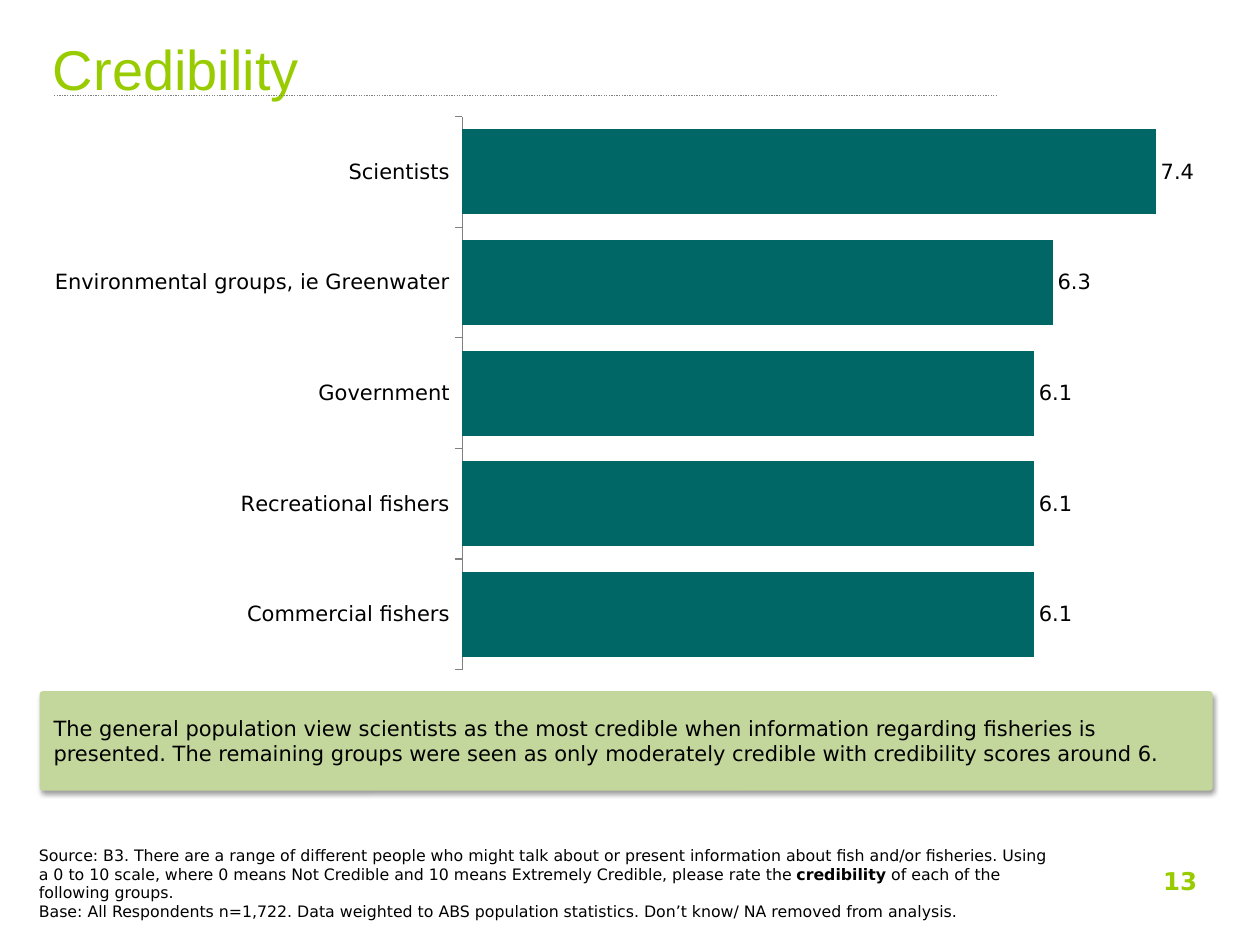
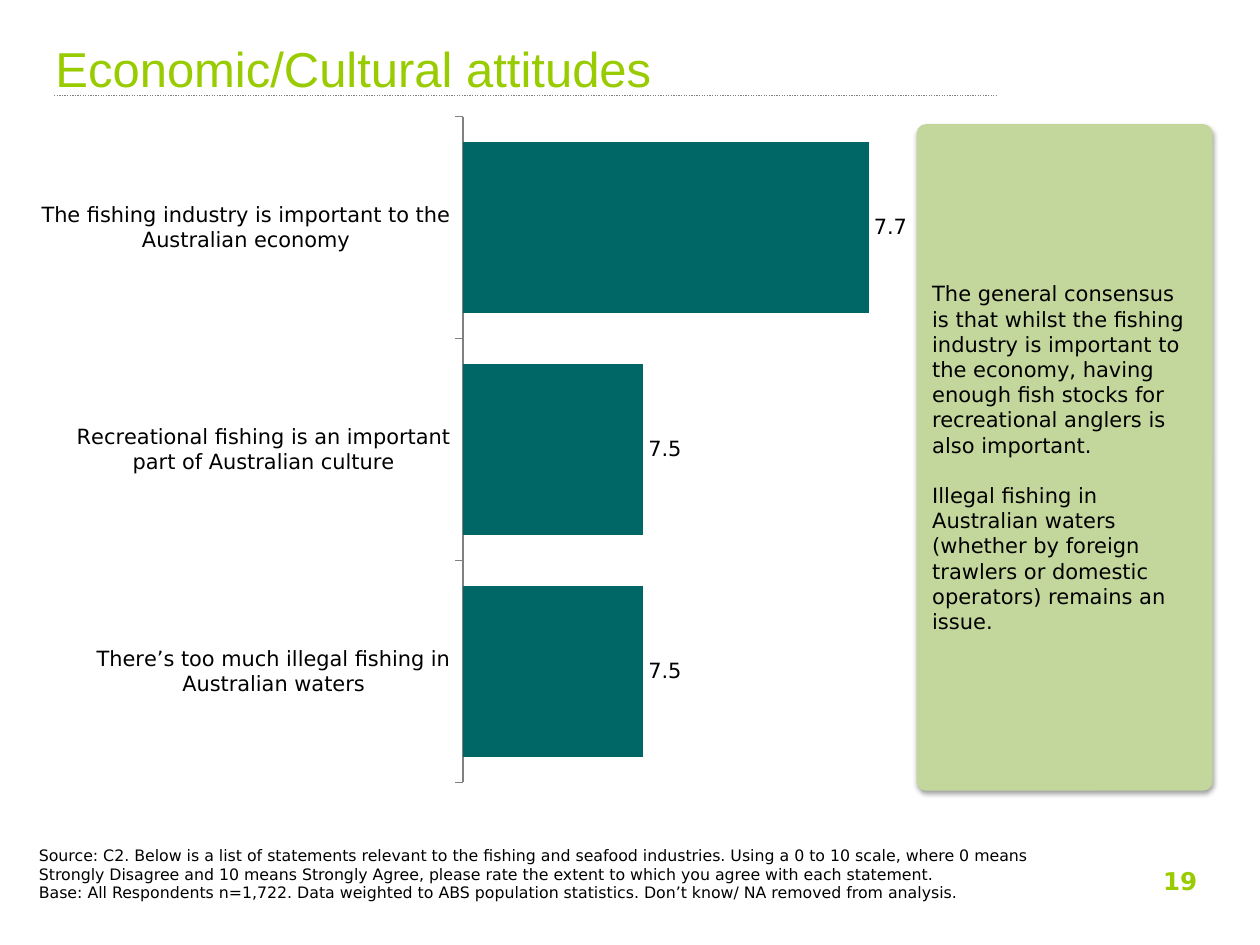
from lxml import etree
from pptx import Presentation
from pptx.chart.data import CategoryChartData
from pptx.dml.color import RGBColor
from pptx.enum.chart import XL_CHART_TYPE, XL_LABEL_POSITION, XL_TICK_MARK
from pptx.enum.dml import MSO_LINE
from pptx.enum.shapes import MSO_CONNECTOR, MSO_SHAPE
from pptx.enum.text import MSO_ANCHOR, PP_ALIGN
from pptx.oxml import parse_xml
from pptx.oxml.ns import nsdecls, qn
from pptx.util import Inches, Pt

COLORS = {"lime": "99CC00", "teal": "006666", "sage": "C3D69B",
          "gray": "808080", "black": "000000"}
BODY = "DejaVu Sans"
STYLES = {
    "title": {"name": "Arial", "color": "lime"},
    "number": {"name": BODY, "size": Pt(14), "bold": True, "color": "lime"},
    "source": {"name": BODY, "size": Pt(9), "color": "black"},
    "strong": {"name": BODY, "size": Pt(9), "bold": True, "color": "black"},
    "note": {"name": BODY, "size": Pt(12), "color": "black"},
}
BASE = ("Base: All Respondents n=1,722. Data weighted to ABS population "
        "statistics. Don’t know/ NA removed from analysis.")


def paint(name):
    return RGBColor.from_string(COLORS[name])


def style(font, key, **extra):
    for attr, value in {**STYLES[key], **extra}.items():
        if attr == "color":
            font.color.rgb = paint(value)
        else:
            setattr(font, attr, value)


def place(box):
    return [Inches(v) for v in box]


def write(frame, paras, key, gap=0, align=PP_ALIGN.LEFT):
    """Each paragraph is a list of (text, style) runs or a plain string."""
    frame.word_wrap = True
    for i, runs in enumerate(paras):
        para = frame.add_paragraph() if i else frame.paragraphs[0]
        para.alignment = align
        if i and gap:
            para.space_before = Pt(gap)
        for text, look in [(runs, key)] if isinstance(runs, str) else runs:
            run = para.add_run()
            run.text = text
            style(run.font, look)


# Title with the dotted rule below it
def add_title(slide, box, text, size):
    title = slide.shapes.title
    title.left, title.top, title.width, title.height = place(box)
    frame = title.text_frame
    frame.vertical_anchor = MSO_ANCHOR.MIDDLE
    frame.text = text
    para = frame.paragraphs[0]
    para.alignment = PP_ALIGN.LEFT
    style(para.runs[0].font, "title", size=Pt(size))
    rule = slide.shapes.add_connector(MSO_CONNECTOR.STRAIGHT,
                                      *place((0.43, 0.76, 7.91, 0.76)))
    rule.line.color.rgb = paint("gray")
    rule.line.width = Pt(0.75)
    rule.line.dash_style = MSO_LINE.ROUND_DOT
    etree.SubElement(rule.element.spPr, qn("a:effectLst"))


# Source note and page number
def add_footer(slide, source, number):
    note = slide.shapes.add_textbox(*place((0.21, 6.66, 8.28, 0.6)))
    write(note.text_frame, [source, BASE], "source")
    page = slide.shapes.add_textbox(*place((7.27, 6.82, 2.33, 0.52)))
    write(page.text_frame, [number], "number", align=PP_ALIGN.RIGHT)


# Green panel with the finding
def add_panel(slide, box, paras):
    panel = slide.shapes.add_shape(MSO_SHAPE.ROUNDED_RECTANGLE, *place(box))
    panel.adjustments[0] = 0.03
    panel.fill.solid()
    panel.fill.fore_color.rgb = paint("sage")
    panel.line.color.rgb = paint("sage")
    panel.line.width = Pt(0.75)
    panel.element.spPr.append(parse_xml(
        f'<a:effectLst {nsdecls("a")}><a:outerShdw blurRad="{Pt(3.1)}" '
        f'dist="{Pt(1.6)}" dir="5400000" rotWithShape="0">'
        f'<a:srgbClr val="{COLORS["black"]}"><a:alpha val="38000"/></a:srgbClr>'
        '</a:outerShdw></a:effectLst>'))
    panel.text_frame.vertical_anchor = MSO_ANCHOR.MIDDLE
    write(panel.text_frame, paras, "note", gap=14.4)


# Bar chart of mean scores
def add_bars(slide, box, scores, scale, left):
    data = CategoryChartData(number_format="0.0")
    data.categories = list(scores)
    data.add_series("Series 1", list(scores.values()))
    chart = slide.shapes.add_chart(XL_CHART_TYPE.BAR_CLUSTERED,
                                   *place(box), data).chart
    chart.has_title = chart.has_legend = False
    style(chart.font, "note", size=Pt(18))

    cats = chart.category_axis
    cats.reverse_order = True
    cats.has_major_gridlines = False
    cats.major_tick_mark = XL_TICK_MARK.OUTSIDE
    cats.format.line.color.rgb = paint("gray")
    style(cats.tick_labels.font, "note")
    axis = chart.value_axis
    axis.visible = axis.has_major_gridlines = False
    axis.minimum_scale, axis.maximum_scale = scale

    plot = chart.plots[0]
    plot.gap_width = 30
    plot.vary_by_categories = False
    fill = plot.series[0].format.fill
    fill.solid()
    fill.fore_color.rgb = paint("teal")
    plot.has_data_labels = True
    labels = plot.data_labels
    for attr, value in {"show_value": True, "number_format": "#,##0.0",
                        "number_format_is_linked": False,
                        "position": XL_LABEL_POSITION.OUTSIDE_END}.items():
        setattr(labels, attr, value)
    style(labels.font, "note")
    set_area(chart, {"x": left, "y": 0, "w": round(1 - left, 3), "h": 0.96})


def set_area(chart, sides):
    area = chart.element.find(".//" + qn("c:plotArea"))
    for old in area.findall(qn("c:layout")):
        area.remove(old)
    modes = "".join(f'<c:{s}Mode val="edge"/>' for s in "xy")
    sizes = "".join(f'<c:{s} val="{v}"/>' for s, v in sides.items())
    area.insert(0, parse_xml(
        f'<c:layout {nsdecls("c")}><c:manualLayout>'
        f'<c:layoutTarget val="inner"/>{modes}{sizes}'
        '</c:manualLayout></c:layout>'))


def add_trust(slide):
    add_title(slide, (0.32, 0.09, 7.34, 0.9), "Credibility", 32)
    add_bars(slide, (0.32, 0.92, 9.3, 4.58), {
        "Scientists": 7.4,
        "Environmental groups, ie Greenwater": 6.3,
        "Government": 6.1,
        "Recreational fishers": 6.1,
        "Commercial fishers": 6.1,
    }, (0, 8), 0.36)
    add_panel(slide, (0.32, 5.49, 9.3, 0.78), [
        "The general population view scientists as the most credible when "
        "information regarding fisheries is presented. The remaining groups "
        "were seen as only moderately credible with credibility scores "
        "around 6."])
    add_footer(slide, [
        ("Source: B3. There are a range of different people who might talk "
         "about or present information about fish and/or fisheries. Using a "
         "0 to 10 scale, where 0 means Not Credible and 10 means Extremely "
         "Credible, please rate the ", "source"),
        ("credibility", "strong"),
        (" of each of the following groups.", "source")], "13")


def add_views(slide):
    add_title(slide, (0.34, 0.09, 7.34, 0.9), "Economic/Cultural attitudes", 28)
    add_bars(slide, (0.32, 0.92, 6.88, 5.51), {
        "The fishing industry is important to the Australian economy": 7.7,
        "Recreational fishing is an important part of Australian culture": 7.5,
        "There’s too much illegal fishing in Australian waters": 7.5,
    }, (7.34, 7.73), 0.49)
    add_panel(slide, (7.28, 0.99, 2.34, 5.28), [
        "The general consensus is that whilst the fishing industry is "
        "important to the economy, having enough fish stocks for recreational "
        "anglers is also important.",
        "Illegal fishing in Australian waters (whether by foreign trawlers or "
        "domestic operators) remains an issue."])
    add_footer(slide, (
        "Source: C2. Below is a list of statements relevant to the fishing "
        "and seafood industries. Using a 0 to 10 scale, where 0 means "
        "Strongly Disagree and 10 means Strongly Agree, please rate the "
        "extent to which you agree with each statement."), "19")


def main():
    deck = Presentation()
    deck.slide_width, deck.slide_height = Inches(10), Inches(7.5)
    for build in (add_trust, add_views):
        build(deck.slides.add_slide(deck.slide_layouts[5]))
    deck.save("out.pptx")


if __name__ == "__main__":
    main()
